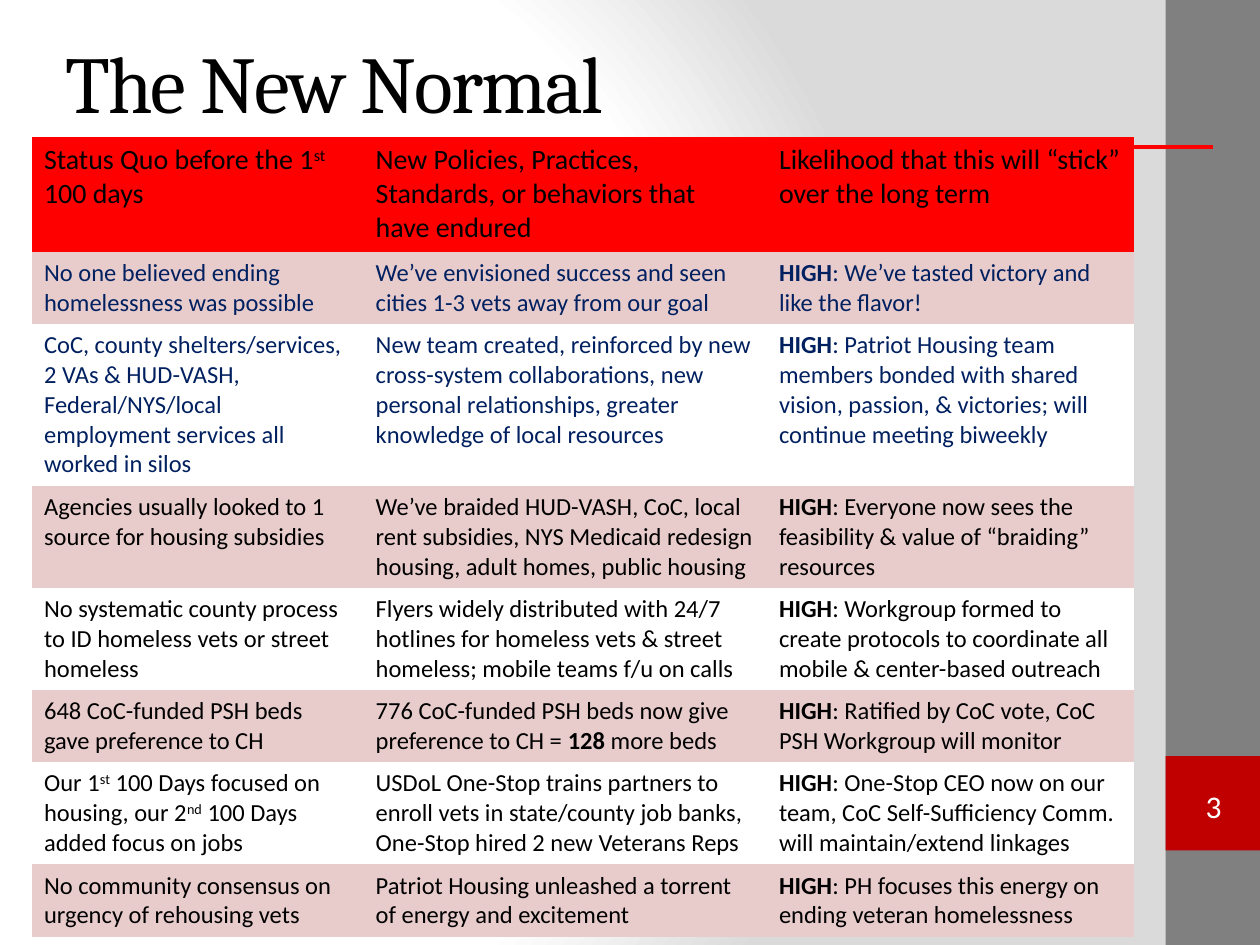
from dataclasses import dataclass

import lxml.etree
import pptx
import pptx.dml.color
import pptx.enum.shapes
import pptx.enum.text
import pptx.oxml
import pptx.oxml.ns
import pptx.util

Pt = pptx.util.Pt
qn = pptx.oxml.ns.qn
SHAPE = pptx.enum.shapes.MSO_SHAPE
ALIGN = pptx.enum.text.PP_ALIGN
MIDDLE = pptx.enum.text.MSO_ANCHOR.MIDDLE
PLAIN_TABLE_STYLE = "{2D5ABB26-0587-4C30-8999-92F81FD0307C}"


@dataclass(frozen=True)
class Theme:
    black: str = "000000"
    white: str = "FFFFFF"
    navy: str = "002060"
    gray: str = "808080"
    backdrop: str = "DADADA"
    accent: str = "C00000"
    red: str = "FF0000"
    band: str = "E8CBCB"
    heading_font: str = "Cambria"
    body_font: str = "Calibri"
    title_size: int = 46
    number_size: int = 18
    header_size: int = 16
    body_size: int = 14


HEADERS = (
    "Status Quo before the 1^st^ 100 days",
    "New Policies, Practices, Standards, or behaviors that have endured",
    "Likelihood that this will “stick” over the long term",
)
CHANGES = (
    ("No one believed ending homelessness was possible",
     "We’ve envisioned success and seen cities 1-3 vets away from our goal",
     "*HIGH*: We’ve tasted victory and like the flavor!"),
    ("CoC, county shelters/services, 2 VAs & HUD-VASH, Federal/NYS/local "
     "employment services all worked in silos",
     "New team created, reinforced by new cross-system collaborations, new "
     "personal relationships, greater knowledge of local resources",
     "*HIGH*: Patriot Housing team members bonded with shared vision, passion, "
     "& victories; will continue meeting biweekly"),
    ("Agencies usually looked to 1 source for housing subsidies",
     "We’ve braided HUD-VASH, CoC, local rent subsidies, NYS Medicaid redesign "
     "housing, adult homes, public housing",
     "*HIGH*: Everyone now sees the feasibility & value of “braiding” resources"),
    ("No systematic county process to ID homeless vets or street homeless",
     "Flyers widely distributed with 24/7 hotlines for homeless vets & street "
     "homeless; mobile teams f/u on calls",
     "*HIGH*: Workgroup formed to create protocols to coordinate all mobile & "
     "center-based outreach"),
    ("648 CoC-funded PSH beds gave preference to CH",
     "776 CoC-funded PSH beds now give preference to CH = *128 *more beds",
     "*HIGH*: Ratified by CoC vote, CoC PSH Workgroup will monitor"),
    ("Our 1^st^ 100 Days focused on housing, our 2^nd^ 100 Days added focus on jobs",
     "USDoL One-Stop trains partners to enroll vets in state/county job banks, "
     "One-Stop hired 2 new Veterans Reps",
     "*HIGH*: One-Stop CEO now on our team, CoC Self-Sufficiency Comm. will "
     "maintain/extend linkages"),
    ("No community consensus on urgency of rehousing vets",
     "Patriot Housing unleashed a torrent of energy and excitement",
     "*HIGH*: PH focuses this energy on ending veteran homelessness"),
)
COLUMN_WIDTHS = (189.5, 230.5, 210)
ROW_HEIGHTS = (61, 38, 69, 53, 53, 38, 53, 38)
NAVY_ROWS = (1, 2)


def rgb(color):
    return pptx.dml.color.RGBColor.from_string(color)


def apply(target, values):
    for name, value in values.items():
        setattr(target, name, value)


class SlideBuilder:
    def __init__(self, slide, theme):
        self.slide = slide
        self.theme = theme

    def add_text(self, paragraph, text, size, color, font=None):
        """Add runs; *...* marks bold and ^...^ marks superscript."""
        style = {"name": font or self.theme.body_font, "size": Pt(size)}
        for bold_index, stretch in enumerate(text.split("*")):
            for raised_index, words in enumerate(stretch.split("^")):
                if not words:
                    continue
                run = paragraph.add_run()
                run.text = words
                apply(run.font, {**style, "bold": bold_index % 2 == 1})
                run.font.color.rgb = rgb(color)
                if raised_index % 2:
                    run._r.get_or_add_rPr().set("baseline", "30000")

    def background(self):
        """Fill the slide with a circular gradient, which has no public method."""
        stops = ((0, self.theme.white), (75, self.theme.white), (100, self.theme.backdrop))
        stop_xml = "".join(
            f'<a:gs pos="{position * 1000}"><a:srgbClr val="{color}"/></a:gs>'
            for position, color in stops)
        gradient = pptx.oxml.parse_xml(
            f'<a:gradFill xmlns:a="{pptx.oxml.ns.nsuri("a")}" rotWithShape="1">'
            f'<a:gsLst>{stop_xml}</a:gsLst><a:path path="circle">'
            '<a:fillToRect l="20000" t="50000" r="100000" b="50000"/>'
            '</a:path></a:gradFill>')
        self.slide.background.fill.solid()
        solid = self.slide._element.find(".//" + qn("p:bgPr")).find(qn("a:solidFill"))
        solid.getparent().replace(solid, gradient)

    def title(self, text, left, top, width, height):
        title = self.slide.shapes.title
        apply(title, {"left": Pt(left), "top": Pt(top),
                      "width": Pt(width), "height": Pt(height)})
        apply(title.text_frame, {"vertical_anchor": MIDDLE, "word_wrap": True})
        paragraph = title.text_frame.paragraphs[0]
        paragraph.alignment = ALIGN.LEFT
        self.add_text(paragraph, text, self.theme.title_size, self.theme.black,
                      self.theme.heading_font)
        paragraph.runs[0]._r.get_or_add_rPr().set("spc", "-100")

    def shape(self, kind, left, top, width, height, fill=None):
        shape = self.slide.shapes.add_shape(kind, Pt(left), Pt(top), Pt(width), Pt(height))
        shape.shadow.inherit = False
        shape.line.fill.background()
        if fill:
            shape.fill.solid()
            shape.fill.fore_color.rgb = rgb(fill)
        else:
            shape.fill.background()
        return shape

    def page_number(self, text, left, top, width, height):
        badge = self.shape(SHAPE.DOUBLE_BRACKET, left, top, width, height)
        badge.adjustments[0] = 0.18
        margins = dict.fromkeys(
            ("margin_left", "margin_top", "margin_right", "margin_bottom"), 0)
        apply(badge.text_frame, {**margins, "vertical_anchor": MIDDLE})
        paragraph = badge.text_frame.paragraphs[0]
        paragraph.alignment = ALIGN.CENTER
        self.add_text(paragraph, text, self.theme.number_size, self.theme.white)

    def rule(self, left, right, y):
        line = self.slide.shapes.add_connector(
            pptx.enum.shapes.MSO_CONNECTOR.STRAIGHT, Pt(left), Pt(y), Pt(right), Pt(y))
        line.line.color.rgb = rgb(self.theme.red)
        line.line.width = Pt(2.25)
        lxml.etree.SubElement(line._element.spPr, qn("a:effectLst"))

    def table(self, rows, left, top):
        theme = self.theme
        table = self.slide.shapes.add_table(
            len(rows), len(COLUMN_WIDTHS), Pt(left), Pt(top),
            Pt(sum(COLUMN_WIDTHS)), Pt(sum(ROW_HEIGHTS))).table
        apply(table, {"first_row": False, "horz_banding": False})
        table._tbl.tblPr.find(qn("a:tableStyleId")).text = PLAIN_TABLE_STYLE
        for column, width in zip(table.columns, COLUMN_WIDTHS):
            column.width = Pt(width)
        for index, (row, height, texts) in enumerate(zip(table.rows, ROW_HEIGHTS, rows)):
            row.height = Pt(height)
            fill = theme.red if index == 0 else theme.band if index % 2 else theme.white
            size = theme.body_size if index else theme.header_size
            color = theme.navy if index in NAVY_ROWS else theme.black
            for cell, text in zip(row.cells, texts):
                cell.fill.solid()
                cell.fill.fore_color.rgb = rgb(fill)
                self.add_text(cell.text_frame.paragraphs[0], text, size, color)


def main():
    deck = pptx.Presentation()
    apply(deck, {"slide_width": Pt(720), "slide_height": Pt(540)})
    theme = Theme()
    builder = SlideBuilder(deck.slides.add_slide(deck.slide_layouts[5]), theme)
    builder.background()
    builder.shape(SHAPE.RECTANGLE, 666, 0, 54, 540, theme.gray)
    builder.shape(SHAPE.RECTANGLE, 666, 432, 54, 54, theme.accent)
    builder.title("The New Normal", 30, 1.5, 600, 90)
    builder.rule(24, 693, 84)
    builder.page_number("3", 672, 445, 43, 31)
    builder.table((HEADERS, *CHANGES), 18, 78)
    deck.save("out.pptx")


if __name__ == "__main__":
    main()
